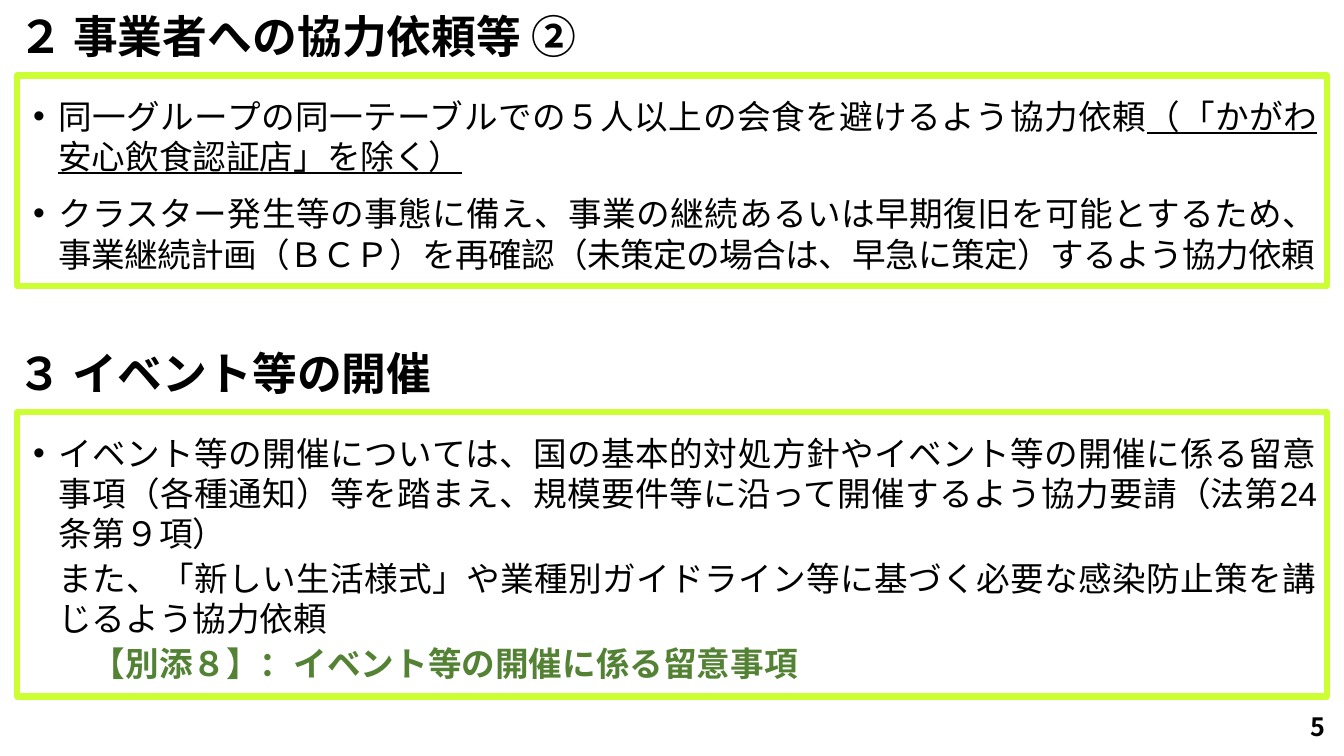
import pptx
import pptx.util
import pptx.dml.color
import pptx.enum.shapes
import pptx.enum.text
import pptx.oxml.ns
import lxml.etree

Inches, Pt = pptx.util.Inches, pptx.util.Pt
ALIGN = pptx.enum.text.PP_ALIGN
ANCHOR = pptx.enum.text.MSO_ANCHOR


def color(code):
    return pptx.dml.color.RGBColor.from_string(code)


def apply(item, values):
    """Set each attribute of item from a dict of format values."""
    for name, value in values.items():
        setattr(item, name, value)


class Deck:
    head = {"size": Pt(32), "bold": True}
    page = {"size": Pt(18), "bold": True}
    body = {"size": Pt(24), "bold": False}
    bold_face, body_face = "Noto Sans CJK JP", "Arial"
    black, green, lime = "000000", "548235", "CCFF33"

    def __init__(self):
        self.file = pptx.Presentation()
        apply(self.file, {"slide_width": Inches(13.33), "slide_height": Inches(7.5)})
        self.slide = self.file.slides.add_slide(self.file.slide_layouts[5])

    def run(self, par, text, face, style, tint=black, space=None):
        run = par.add_run()
        run.text = text
        apply(run.font, {"name": face, **style})
        run.font.color.rgb = color(tint)
        props = run.font._element
        east = lxml.etree.Element(pptx.oxml.ns.qn("a:ea"), typeface=face)
        props.find(pptx.oxml.ns.qn("a:latin")).addnext(east)
        if space is not None:
            props.set("spc", str(round(space * 100)))

    def line(self, shape, text, style, align=ALIGN.LEFT, pitch=1.0):
        """Fill a shape with one vertically centred line of bold text."""
        apply(shape.text_frame, {"word_wrap": True, "vertical_anchor": ANCHOR.MIDDLE,
                                 "auto_size": pptx.enum.text.MSO_AUTO_SIZE.NONE})
        par = shape.text_frame.paragraphs[0]
        apply(par, {"alignment": align, "line_spacing": pitch})
        self.run(par, text, self.bold_face, style)

    def heading(self, top, text, title=False):
        spot = [Inches(n) for n in (0.08, top, 13.17, 0.7)]
        if title:
            shape = self.slide.shapes.title
            apply(shape, dict(zip(("left", "top", "width", "height"), spot)))
        else:
            shape = self.slide.shapes.add_textbox(*spot)
        self.line(shape, text, self.head, pitch=0.9)

    def number(self, text):
        shape = self.slide.shapes.add_textbox(
            Inches(10.24), Inches(7.01), Inches(3), Inches(0.4))
        self.line(shape, text, self.page, ALIGN.RIGHT)

    def panel(self, top, height, items):
        """Draw a framed box; each item is (bullet, space before, runs)."""
        box = self.slide.shapes.add_shape(
            pptx.enum.shapes.MSO_SHAPE.RECTANGLE,
            Inches(0.17), Inches(top), Inches(12.99), Inches(height))
        box.shadow.inherit = False
        box.fill.background()
        box.line.color.rgb = color(self.lime)
        box.line.width = Pt(4.5)
        frame = box.text_frame
        apply(frame, {"word_wrap": True, "vertical_anchor": ANCHOR.TOP,
                      "margin_left": Inches(0.1), "margin_right": Inches(0.1),
                      "margin_top": Inches(0.2), "margin_bottom": Inches(0.05)})
        for index, (bullet, before, runs) in enumerate(items):
            par = frame.add_paragraph() if index else frame.paragraphs[0]
            apply(par, {"alignment": ALIGN.JUSTIFY, "space_before": Pt(before)})
            self.indent(par, bullet)
            for text, style, *rest in runs:
                self.run(par, text, self.body_face, {**self.body, **style}, *rest)

    def indent(self, par, bullet):
        props = par._p.get_or_add_pPr()
        props.set("marL", str(Inches(0.31)))
        props.set("indent", str(Inches(-0.25 if bullet else 0)))
        if bullet:
            for tag, values in (("a:buFont", {"typeface": "Arial"}),
                                ("a:buChar", {"char": "•"})):
                lxml.etree.SubElement(props, pptx.oxml.ns.qn(tag), values)


def main():
    deck = Deck()
    deck.heading(0.04, "２ 事業者への協力依頼等 ②", title=True)
    deck.panel(0.75, 2.09, [
        (True, 12, [
            ("同一グループの同一テーブルでの５人以上の会食を避けるよう協力依頼", {}),
            ("（「かがわ安心飲食認証店」を除く）", {"underline": True})]),
        (True, 12, [
            ("クラスター発生等の事態に備え、事業の継続あるいは早期復旧を可能とするため、", {}),
            ("事業継続計画（ＢＣＰ）を再確認（未策定の場合は、早急に策定）するよう協力依頼",
             {}, deck.black, -0.4)]),
    ])
    deck.heading(3.38, "３ イベント等の開催")
    deck.panel(4.09, 2.82, [
        (True, 0, [
            ("イベント等の開催については、国の基本的対処方針やイベント等の開催に係る留意"
             "事項（各種通知）等を踏まえ、規模要件等に沿って開催するよう協力要請"
             "（法第24条第９項）", {})]),
        (False, 3, [
            ("また、「新しい生活様式」や業種別ガイドライン等に基づく必要な感染防止策を"
             "講じるよう協力依頼", {})]),
        (False, 3, [
            ("　", {}),
            ("【別添８】：イベント等の開催に係る留意事項", {"bold": True}, deck.green)]),
    ])
    deck.number("5")
    deck.file.save("out.pptx")


if __name__ == "__main__":
    main()
